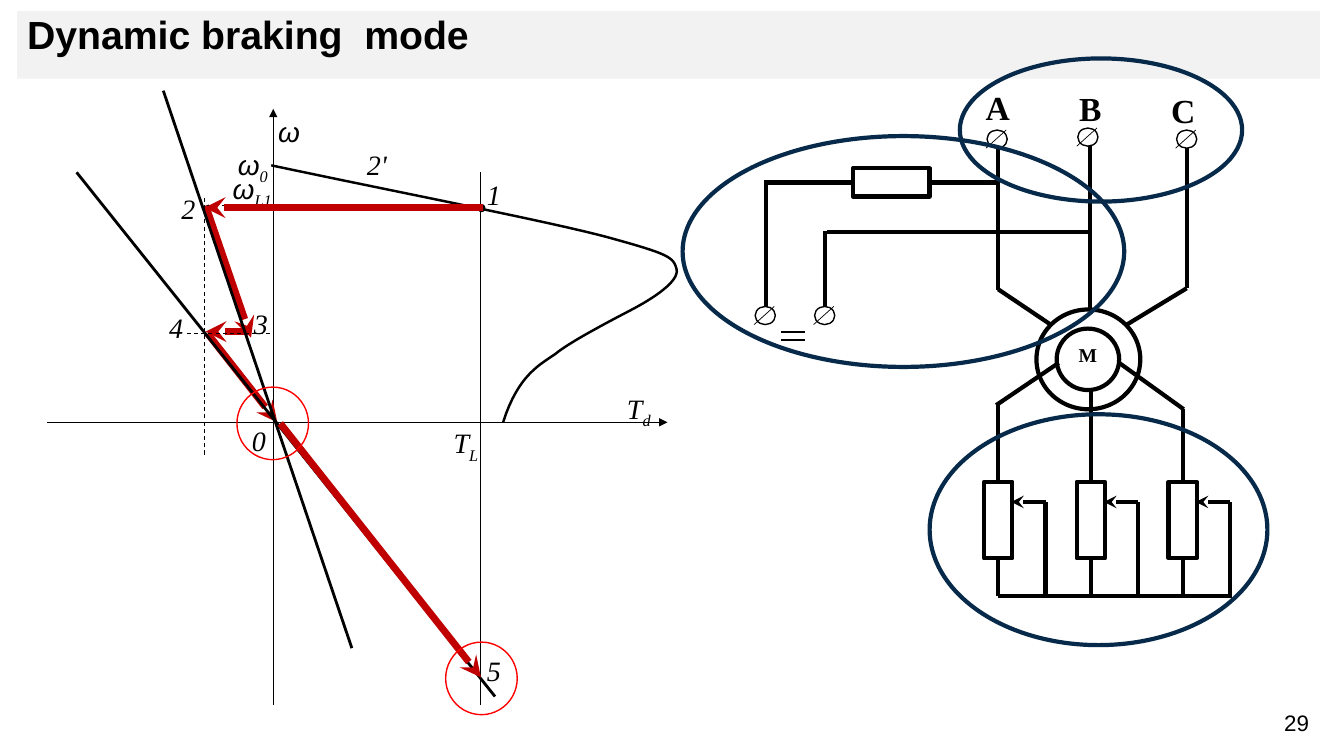
from dataclasses import dataclass

from lxml import etree
from pptx import Presentation
from pptx.dml.color import RGBColor
from pptx.enum.dml import MSO_LINE
from pptx.enum.shapes import MSO_CONNECTOR, MSO_SHAPE
from pptx.enum.text import MSO_ANCHOR, PP_ALIGN
from pptx.oxml.ns import qn
from pptx.util import Inches, Pt

STRAIGHT = MSO_CONNECTOR.STRAIGHT
OVAL, RECTANGLE = MSO_SHAPE.OVAL, MSO_SHAPE.RECTANGLE
LEFT, CENTER = PP_ALIGN.LEFT, PP_ALIGN.CENTER
TOP = MSO_ANCHOR.TOP
DASH = MSO_LINE.DASH


@dataclass(frozen=True)
class Theme:
    black: RGBColor = RGBColor(0x00, 0x00, 0x00)
    white: RGBColor = RGBColor(0xFF, 0xFF, 0xFF)
    band: RGBColor = RGBColor(0xF2, 0xF2, 0xF2)
    path_red: RGBColor = RGBColor(0xC0, 0x00, 0x00)
    ring_red: RGBColor = RGBColor(0xFF, 0x00, 0x00)
    navy: RGBColor = RGBColor(0x07, 0x2A, 0x4B)
    sans: str = "Arial"
    serif: str = "Times New Roman"
    title: int = 28
    phase: int = 24
    label: int = 20
    number: int = 16
    motor: int = 14
    hair: float = 0.75
    curve: float = 1.75
    wire: float = 3
    travel: float = 5


class Page:
    def __init__(self, slide, theme):
        self.shapes = slide.shapes
        self.theme = theme

    def line(self, start, end, color, width, arrow=None, dash=None, parent=None):
        points = [Inches(value) for value in (*start, *end)]
        link = (parent or self.shapes).add_connector(STRAIGHT, *points)
        link.line.color.rgb = color
        link.line.width = Pt(width)
        if dash:
            link.line.dash_style = dash
        properties = link._element.spPr
        if arrow:
            etree.SubElement(properties.find(qn("a:ln")), qn("a:tailEnd"), type=arrow)
        etree.SubElement(properties, qn("a:effectLst"))

    def wire(self, start, end, arrow=None):
        self.line(start, end, self.theme.black, self.theme.wire, arrow)

    def travel(self, start, end):
        """Red arrow along the path of the operating point."""
        self.line(start, end, self.theme.path_red, self.theme.travel, "stealth")

    def paint(self, shape, fill, color, width):
        shape.shadow.inherit = False
        if fill is None:
            shape.fill.background()
        else:
            shape.fill.solid()
            shape.fill.fore_color.rgb = fill
        if color is None:
            shape.line.fill.background()
        else:
            shape.line.color.rgb = color
            shape.line.width = Pt(width)

    def shape(self, kind, area, fill=None, color=None, width=1, parent=None):
        figure = (parent or self.shapes).add_shape(kind, *map(Inches, area))
        self.paint(figure, fill, color, width)
        return figure

    def resistor(self, area):
        self.shape(RECTANGLE, area, self.theme.white, self.theme.black, self.theme.wire)

    def terminal(self, left, top):
        """Small circle with a slash through it."""
        group = self.shapes.add_group_shape().shapes
        self.shape(OVAL, (left, top, 0.2, 0.18), self.theme.white, self.theme.black, parent=group)
        self.line((left + 0.19, top), (left - 0.01, top + 0.18), self.theme.black, 0.5, parent=group)

    def bezier(self, start, segments, color, width, steps=16):
        """Smooth open curve through cubic segments of three points each."""
        points = []
        origin = start
        for first, second, end in segments:
            for step in range(1, steps + 1):
                t = step / steps
                weights = ((1 - t) ** 3, 3 * t * (1 - t) ** 2, 3 * t * t * (1 - t), t ** 3)
                corners = (origin, first, second, end)
                points.append(tuple(
                    Inches(sum(w * corner[axis] for w, corner in zip(weights, corners)))
                    for axis in (0, 1)))
            origin = end
        builder = self.shapes.build_freeform(Inches(start[0]), Inches(start[1]), scale=1.0)
        builder.add_line_segments(points, close=False)
        self.paint(builder.convert_to_shape(), None, color, width)

    def fill_text(self, frame, text, size, font, align=LEFT, bold=False, italic=False):
        frame.vertical_anchor = TOP
        para = frame.paragraphs[0]
        para.alignment = align
        para.font.size = Pt(size)
        para.font.name = font
        para.font.bold = bold
        para.font.italic = italic
        para.font.color.rgb = self.theme.black
        para.add_run().text = text
        return para

    def text(self, area, text, size, font, align=LEFT, wrap=True, **style):
        box = self.shapes.add_textbox(*map(Inches, area))
        box.text_frame.word_wrap = wrap
        return self.fill_text(box.text_frame, text, size, font, align, **style)

    def label(self, area, text, subscript=None, font=None):
        theme = self.theme
        para = self.text(area, text, theme.label, font or theme.serif, italic=True)
        para.line_spacing = 1.15
        para.space_after = Pt(10)
        if subscript:
            span = para.add_run()
            span.text = subscript
            span.font.name = theme.serif
            span._r.get_or_add_rPr().set("baseline", "-25000")


def draw_characteristics(page):
    theme = page.theme
    black = theme.black
    page.bezier((2.69, 1.64), [
        ((3.81, 1.88), (5.47, 2.2), (6.05, 2.36)),
        ((6.63, 2.52), (6.68, 2.55), (6.71, 2.67)),
        ((6.74, 2.79), (6.48, 2.96), (6.25, 3.08)),
        ((6.02, 3.2), (5.64, 3.4), (5.51, 3.51)),
        ((5.37, 3.61), (5.14, 3.71), (4.99, 4.19)),
    ], black, theme.curve)

    for left, top, width, text, subscript, font in [
        (6.12, 3.78, 0.56, "T", "d", None),
        (4.4, 4.12, 0.46, "T", "L", None),
        (2.66, 1.04, 0.75, "ω", None, theme.sans),
        (2.26, 1.36, 0.75, "ω", "0", theme.sans),
        (2.21, 1.6, 0.75, "ω", "L1", theme.sans),
        (2.4, 4.1, 0.38, "0", None, None),
        (4.73, 1.66, 0.38, "1", None, None),
        (1.7, 1.8, 0.56, "2", None, None),
        (3.54, 1.36, 0.56, "2'", None, None),
        (2.42, 2.94, 0.56, "3", None, None),
        (1.58, 2.98, 0.56, "4", None, None),
        (4.73, 6.38, 0.56, "5", None, None),
    ]:
        page.label((left, top, width, 0.58), text, subscript, font)

    page.line((2.71, 6.99), (2.71, 1.08), black, theme.hair, "triangle")
    page.line((0.47, 4.19), (6.62, 4.19), black, theme.hair, "triangle")
    page.line((4.77, 1.71), (4.77, 6.99), black, theme.hair)
    page.shape(OVAL, (4.74, 2.03, 0.07, 0.07), black, black, theme.hair)

    page.travel((2.06, 3.31), (2.75, 4.19))
    page.travel((2.47, 3.29), (2.04, 3.29))
    page.travel((2.04, 2.04), (2.49, 3.35))
    for start, end in [((4.75, 2.04), (2.03, 2.04)), ((2.03, 4.51), (2.03, 1.95)),
                       ((2.68, 3.31), (1.85, 3.31))]:
        page.line(start, end, black, theme.hair, dash=DASH)
    page.line((0.76, 1.71), (4.91, 6.91), black, 2)
    page.line((1.62, 0.9), (3.49, 6.43), black, 2)
    page.travel((4.79, 2.06), (2.03, 2.06))
    page.travel((2.78, 4.2), (4.77, 6.72))
    for left, top in [(2.35, 3.84), (4.42, 6.37)]:
        page.shape(OVAL, (left, top, 0.71, 0.72), color=theme.ring_red)


def draw_circuit(page):
    theme = page.theme
    page.wire((10.83, 2.3), (8.2, 2.3))
    page.shape(OVAL, (10.28, 3.07, 1.03, 0.99), color=theme.black, width=theme.wire)

    for x, top in [(9.9, 4.02), (10.82, 3.87), (11.73, 4.06)]:
        page.wire((x, top), (x, 5.91))
        page.resistor((x - 0.14, 4.78, 0.28, 0.76))
        page.wire((x + 0.47, 5.93), (x + 0.47, 4.98))
        page.wire((x + 0.47, 4.98), (x + 0.13, 4.98), "stealth")
    page.wire((12.21, 5.91), (9.9, 5.91))

    for start, end in [((10.5, 3.6), (9.88, 4.02)), ((11.1, 3.6), (11.74, 4.06)),
                       ((9.9, 2.87), (10.42, 3.22)), ((11.77, 2.86), (11.16, 3.23))]:
        page.wire(start, end)
    rotor = page.shape(OVAL, (10.48, 3.26, 0.62, 0.61), color=theme.black, width=theme.wire)
    page.fill_text(rotor.text_frame, "M", theme.motor, theme.serif, CENTER, bold=True)

    for name, x, bottom, left, top, label_left, label_top in [
        ("A", 9.9, 2.88, 9.79, 1.29, 9.67, 0.81),
        ("B", 10.81, 3.07, 10.69, 1.27, 10.59, 0.82),
        ("C", 11.77, 2.86, 11.67, 1.29, 11.51, 0.84),
    ]:
        page.wire((x, 1.45), (x, bottom))
        page.terminal(left, top)
        page.text((label_left, label_top, 0.45, 0.5), name, theme.phase, theme.serif,
                  CENTER, wrap=False, bold=True)

    page.wire((9.9, 1.81), (7.58, 1.81))
    page.resistor((8.46, 1.67, 0.76, 0.28))
    for x, top, left in [(7.6, 1.8, 7.49), (8.18, 2.29, 8.08)]:
        page.wire((x, top), (x, 3.08))
        page.terminal(left, 3.04)
    for y in (3.29, 3.37):
        page.line((7.75, y), (7.98, y), theme.black, 1.5)

    for area in [(6.77, 1.35, 4.38, 2.29), (9.52, 0.58, 2.8, 1.42), (9.22, 4.11, 3.35, 2.29)]:
        page.shape(OVAL, area, color=theme.navy, width=theme.wire)


def main():
    deck = Presentation()
    deck.slide_width, deck.slide_height = Inches(13.33), Inches(7.5)
    theme = Theme()
    page = Page(deck.slides.add_slide(deck.slide_layouts[6]), theme)
    band = page.shape(RECTANGLE, (0.17, 0.11, 12.92, 0.67), theme.band)
    title = page.fill_text(band.text_frame, "Dynamic braking  mode",
                           theme.title, theme.sans, bold=True)
    title.line_spacing = 0.9
    page.text((12.54, 6.99, 0.64, 0.37), "29", theme.number, theme.sans, CENTER)
    draw_characteristics(page)
    draw_circuit(page)
    deck.save("out.pptx")


if __name__ == "__main__":
    main()
